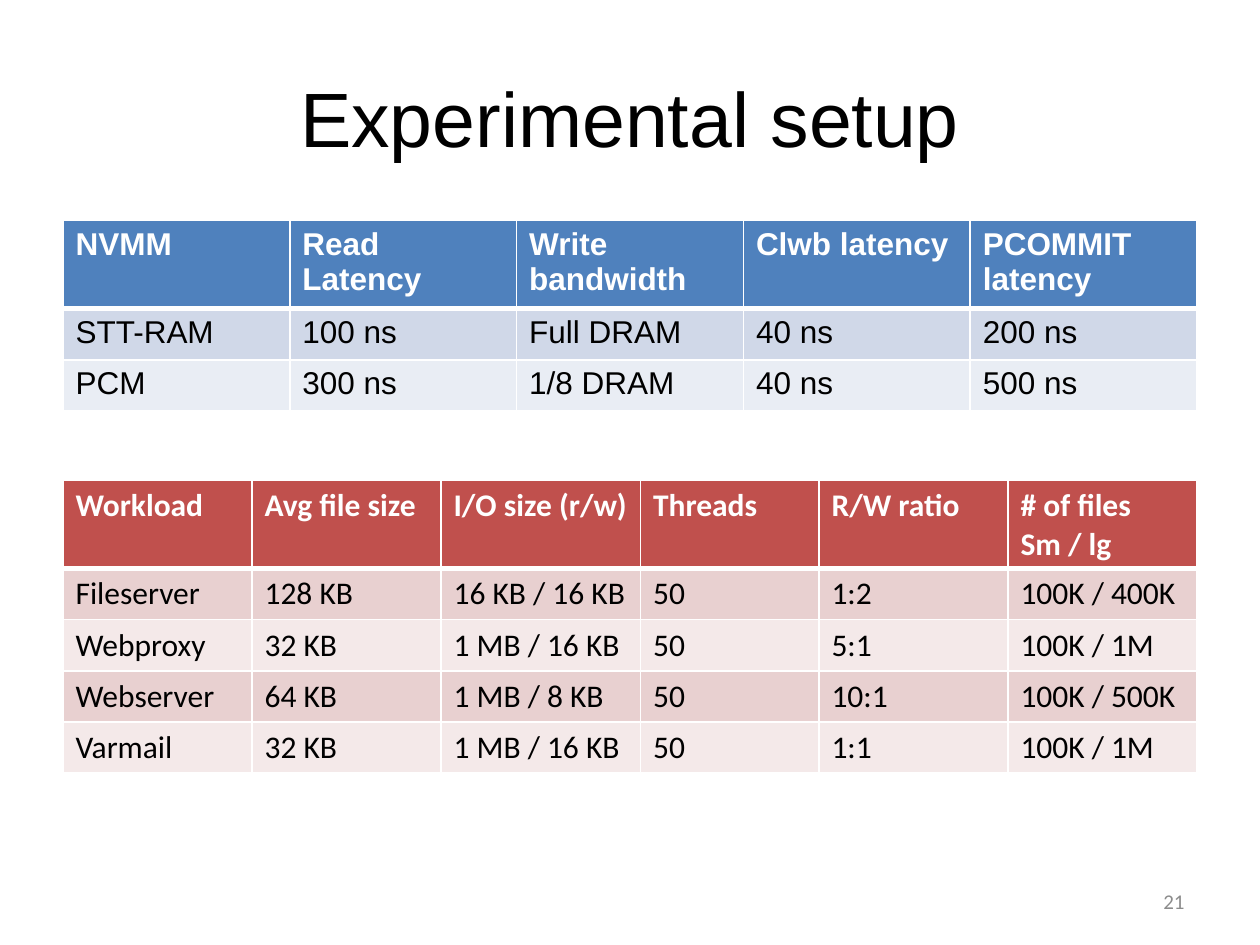
from lxml.etree import SubElement
from pptx import Presentation
from pptx.dml.color import RGBColor
from pptx.enum.text import MSO_ANCHOR, PP_ALIGN
from pptx.oxml.ns import qn
from pptx.util import Pt

COLORS = {
    "text": "000000", "white": "FFFFFF", "number": "8C8C8C",
    "blue": "4F81BD", "blue_odd": "D0D8E8", "blue_even": "E9EDF4",
    "red": "C0504D", "red_odd": "E8D0D0", "red_even": "F4E9E9",
}
ROW_HEIGHT = 29.2

MEMORY = [
    ["NVMM", "Read Latency", "Write bandwidth", "Clwb latency", "PCOMMIT latency"],
    ["STT-RAM", "100 ns", "Full DRAM", "40 ns", "200 ns"],
    ["PCM", "300 ns", "1/8 DRAM", "40 ns", "500 ns"],
]
WORKLOADS = [
    ["Workload", "Avg file size", "I/O size (r/w)", "Threads", "R/W ratio", "# of files\nSm / lg"],
    ["Fileserver", "128 KB", "16 KB / 16 KB", "50", "1:2", "100K / 400K"],
    ["Webproxy", "32 KB", "1 MB / 16 KB", "50", "5:1", "100K / 1M"],
    ["Webserver", "64 KB", "1 MB / 8 KB", "50", "10:1", "100K / 500K"],
    ["Varmail", "32 KB", "1 MB / 16 KB", "50", "1:1", "100K / 1M"],
]


def rgb(name):
    """Return the named colour."""
    return RGBColor.from_string(COLORS[name])


def write(tf, text, font="Arial", size=18, color="text", bold=False, align=PP_ALIGN.LEFT):
    """Fill a text frame with one paragraph per line of text."""
    tf.word_wrap = True
    for i, line in enumerate(text.split("\n")):
        p = tf.add_paragraph() if i else tf.paragraphs[0]
        p.alignment = align
        r = p.add_run()
        r.text = line
        r.font.name, r.font.size, r.font.bold = font, Pt(size), bold
        r.font.color.rgb = rgb(color)


def add_label(s, box, text, **fmt):
    """Add a vertically centred text box."""
    tf = s.shapes.add_textbox(*map(Pt, box)).text_frame
    tf.vertical_anchor = MSO_ANCHOR.MIDDLE
    write(tf, text, **fmt)


def set_borders(cell, top=1, bottom=1):
    """Draw white borders around a table cell."""
    tc_pr = cell._tc.get_or_add_tcPr()
    for side, width in (("L", 1), ("R", 1), ("T", top), ("B", bottom)):
        ln = SubElement(tc_pr, qn(f"a:ln{side}"), w=str(Pt(width)))
        fill = SubElement(ln, qn("a:solidFill"))
        SubElement(fill, qn("a:srgbClr"), val=COLORS["white"])


def add_data_table(s, left, top, widths, rows, theme, font):
    """Add a table with a strong header and alternating body rows."""
    frame = s.shapes.add_table(len(rows), len(widths), Pt(left), Pt(top),
                               Pt(sum(widths)), Pt(ROW_HEIGHT * len(rows)))
    table = frame.table
    for column, width in zip(table.columns, widths):
        column.width = Pt(width)
    for i, values in enumerate(rows):
        table.rows[i].height = Pt(ROW_HEIGHT)
        header = i == 0
        shade = theme if header else f"{theme}_{'odd' if i % 2 else 'even'}"
        for j, text in enumerate(values):
            cell = table.cell(i, j)
            set_borders(cell, top=3 if i == 1 else 1, bottom=3 if header else 1)
            cell.fill.solid()
            cell.fill.fore_color.rgb = rgb(shade)
            write(cell.text_frame, text, font=font, bold=header,
                  color="white" if header else "text")


def main():
    """Build and save the slide."""
    prs = Presentation()
    prs.slide_width, prs.slide_height = Pt(720), Pt(540)
    s = prs.slides.add_slide(prs.slide_layouts[6])
    add_label(s, (36, 21.6, 648, 90), "Experimental setup", size=44, align=PP_ALIGN.CENTER)
    add_data_table(s, 36, 126, [129.6] * 5, MEMORY, "blue", "Arial")
    add_data_table(s, 36, 274.5, [108, 108, 114, 102, 108, 108], WORKLOADS, "red", "Calibri")
    add_label(s, (516, 500.5, 168, 28.75), "21", font="Calibri", size=12,
              color="number", align=PP_ALIGN.RIGHT)
    prs.save("out.pptx")


if __name__ == "__main__":
    main()
